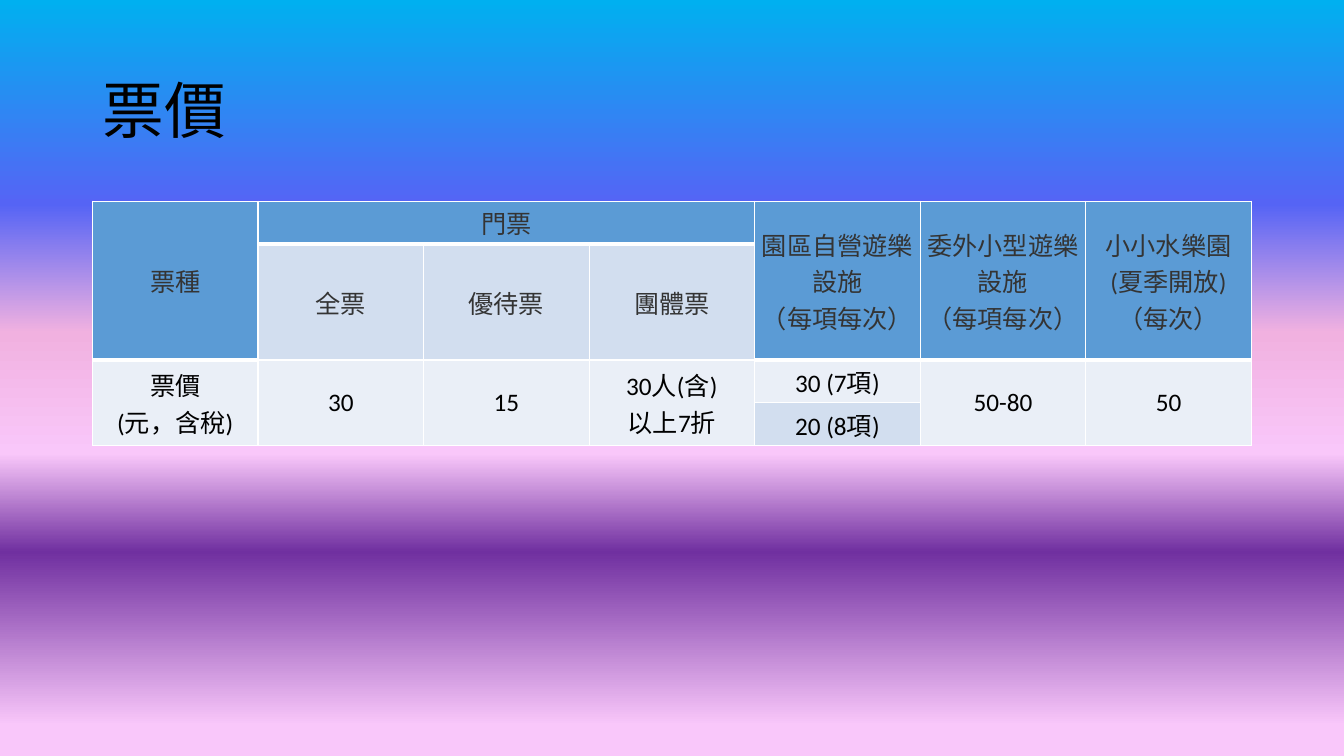
from lxml import etree
from pptx import Presentation
from pptx.dml.color import RGBColor
from pptx.enum.text import MSO_ANCHOR, PP_ALIGN
from pptx.oxml.ns import qn
from pptx.util import Cm, Pt

MIDDLE = MSO_ANCHOR.MIDDLE
LEFT, CENTER = PP_ALIGN.LEFT, PP_ALIGN.CENTER

BLACK = RGBColor(0x00, 0x00, 0x00)
WHITE = RGBColor(0xFF, 0xFF, 0xFF)
CHARCOAL = RGBColor(0x34, 0x34, 0x34)
HEADER_BLUE = RGBColor(0x5B, 0x9B, 0xD5)
BAND_BLUE = RGBColor(0xD2, 0xDE, 0xEF)
PALE_BLUE = RGBColor(0xEA, 0xEF, 0xF7)
SKY = RGBColor(0x00, 0xB0, 0xF0)
INDIGO = RGBColor(0x55, 0x64, 0xF5)
ROSE = RGBColor(0xF1, 0xB1, 0xE0)
PINK = RGBColor(0xF9, 0xC7, 0xFA)
PURPLE = RGBColor(0x70, 0x30, 0xA0)

SUNSET = [(0, SKY), (27, INDIGO), (44, ROSE), (60, PINK), (73, PURPLE), (96, PINK)]

# Row, column, rows spanned, columns spanned, text
HEADERS = [
    (0, 0, 2, 1, "票種"),
    (0, 1, 1, 3, "門票"),
    (0, 4, 2, 1, "園區自營遊樂設施\v（每項每次）"),
    (0, 5, 2, 1, "委外小型遊樂設施\v（每項每次）"),
    (0, 6, 2, 1, "小小水樂園\v(夏季開放)\v（每次）"),
]
TICKET_TYPES = [
    (1, 1, 1, 1, "全票"),
    (1, 2, 1, 1, "優待票"),
    (1, 3, 1, 1, "團體票"),
]
PRICES = [
    (2, 0, 2, 1, "票價\v(元，含稅)"),
    (2, 1, 2, 1, "30"),
    (2, 2, 2, 1, "15"),
    (2, 3, 2, 1, "30人(含)\v以上7折"),
    (2, 4, 1, 1, "30 (7項)"),
    (2, 5, 2, 1, "50-80"),
    (2, 6, 2, 1, "50"),
]
SECOND_PRICE = [(3, 4, 1, 1, "20 (8項)")]


class SlideBuilder:
    font_name = "Calibri"
    title_size = Pt(44)
    cell_size = Pt(18)
    cell_margin = Cm(0.08)

    def __init__(self, prs):
        self.slide = prs.slides.add_slide(prs.slide_layouts[5])

    def background(self, stops):
        fill = self.slide.background.fill
        fill.gradient()
        fill.gradient_angle = 270
        stop_list = self.slide.element.find(".//" + qn("a:gsLst"))
        for old_stop in list(stop_list):
            stop_list.remove(old_stop)
        for percent, color in stops:
            stop = etree.SubElement(stop_list, qn("a:gs"), pos=str(percent * 1000))
            etree.SubElement(stop, qn("a:srgbClr"), val=str(color))

    def style(self, paragraph, size, color, align):
        paragraph.alignment = align
        paragraph.font.name = self.font_name
        paragraph.font.size = size
        paragraph.font.color.rgb = color

    def title(self, text, left, top, width, height):
        title = self.slide.shapes.title
        title.left, title.top, title.width, title.height = left, top, width, height
        frame = title.text_frame
        frame.text = text
        frame.vertical_anchor = MIDDLE
        frame.paragraphs[0].line_spacing = 0.9
        self.style(frame.paragraphs[0], self.title_size, BLACK, LEFT)

    def table(self, left, top, width, row_heights, column_count):
        frame = self.slide.shapes.add_table(
            len(row_heights), column_count, left, top, width, sum(row_heights))
        table = frame.table
        table.first_row = False
        table.horz_banding = False
        for row, height in zip(table.rows, row_heights):
            row.height = height
        return table

    def borders(self, cell, bottom_width):
        properties = cell._tc.get_or_add_tcPr()
        for side, width in (("L", 1), ("R", 1), ("T", 1), ("B", bottom_width)):
            line = etree.SubElement(properties, qn("a:ln" + side), w=str(Pt(width)))
            solid = etree.SubElement(line, qn("a:solidFill"))
            etree.SubElement(solid, qn("a:srgbClr"), val=str(WHITE))

    def cells(self, table, entries, fill, color, bottom_width=1):
        for row, column, row_span, column_span, text in entries:
            cell = table.cell(row, column)
            if row_span * column_span > 1:
                cell.merge(table.cell(row + row_span - 1, column + column_span - 1))
            for r in range(row, row + row_span):
                for c in range(column, column + column_span):
                    part = table.cell(r, c)
                    self.borders(part, bottom_width)
                    part.fill.solid()
                    part.fill.fore_color.rgb = fill
            cell.vertical_anchor = MIDDLE
            cell.margin_left = cell.margin_right = self.cell_margin
            cell.margin_top = cell.margin_bottom = self.cell_margin
            cell.text_frame.text = text
            self.style(cell.text_frame.paragraphs[0], self.cell_size, color, CENTER)


def main():
    prs = Presentation()
    prs.slide_width, prs.slide_height = Cm(33.87), Cm(19.05)
    builder = SlideBuilder(prs)

    # Background and title
    builder.background(SUNSET)
    builder.title("票價", Cm(2.33), Cm(1.01), Cm(29.21), Cm(3.68))

    # Ticket price table
    row_heights = [Cm(1.07), Cm(2.92), Cm(1.08), Cm(1.08)]
    fares = builder.table(Cm(2.33), Cm(5.07), Cm(29.21), row_heights, 7)
    builder.cells(fares, HEADERS, HEADER_BLUE, CHARCOAL, bottom_width=3)
    builder.cells(fares, TICKET_TYPES, BAND_BLUE, CHARCOAL)
    builder.cells(fares, PRICES, PALE_BLUE, BLACK)
    builder.cells(fares, SECOND_PRICE, BAND_BLUE, BLACK)

    prs.save("out.pptx")


if __name__ == "__main__":
    main()
